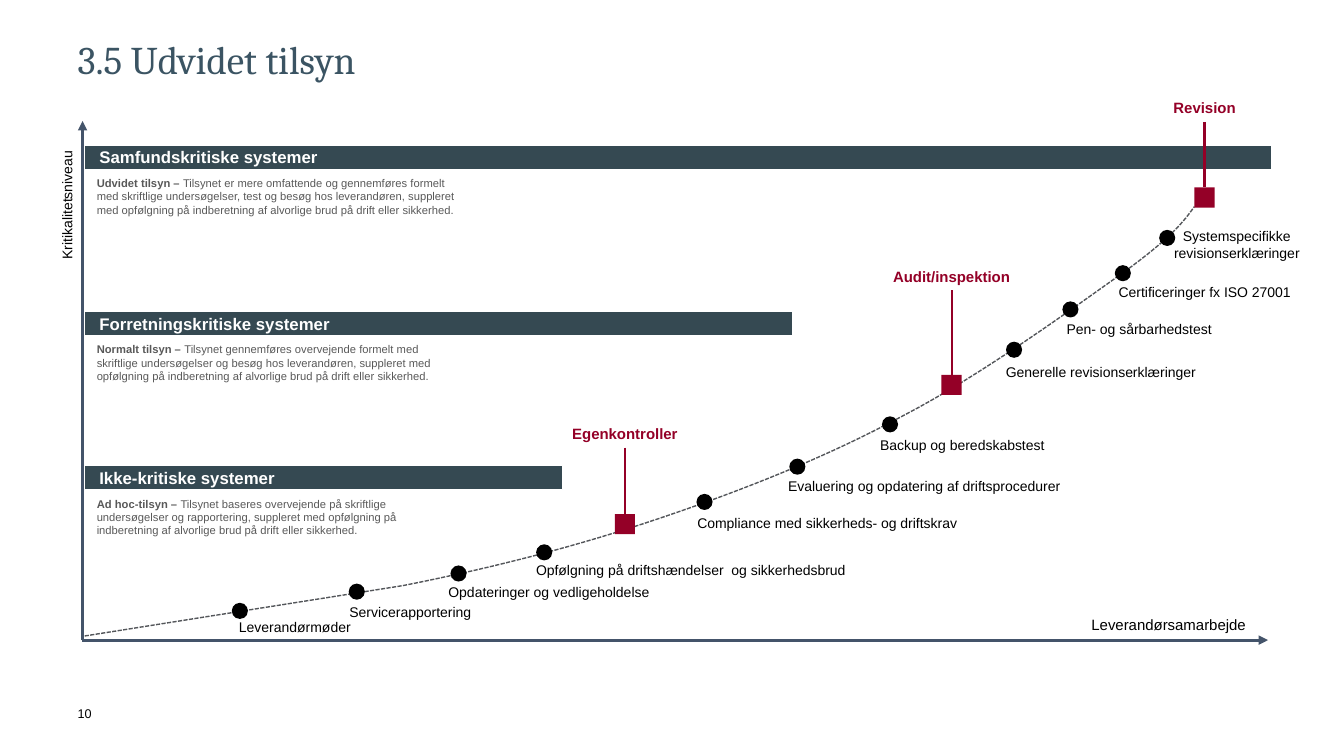
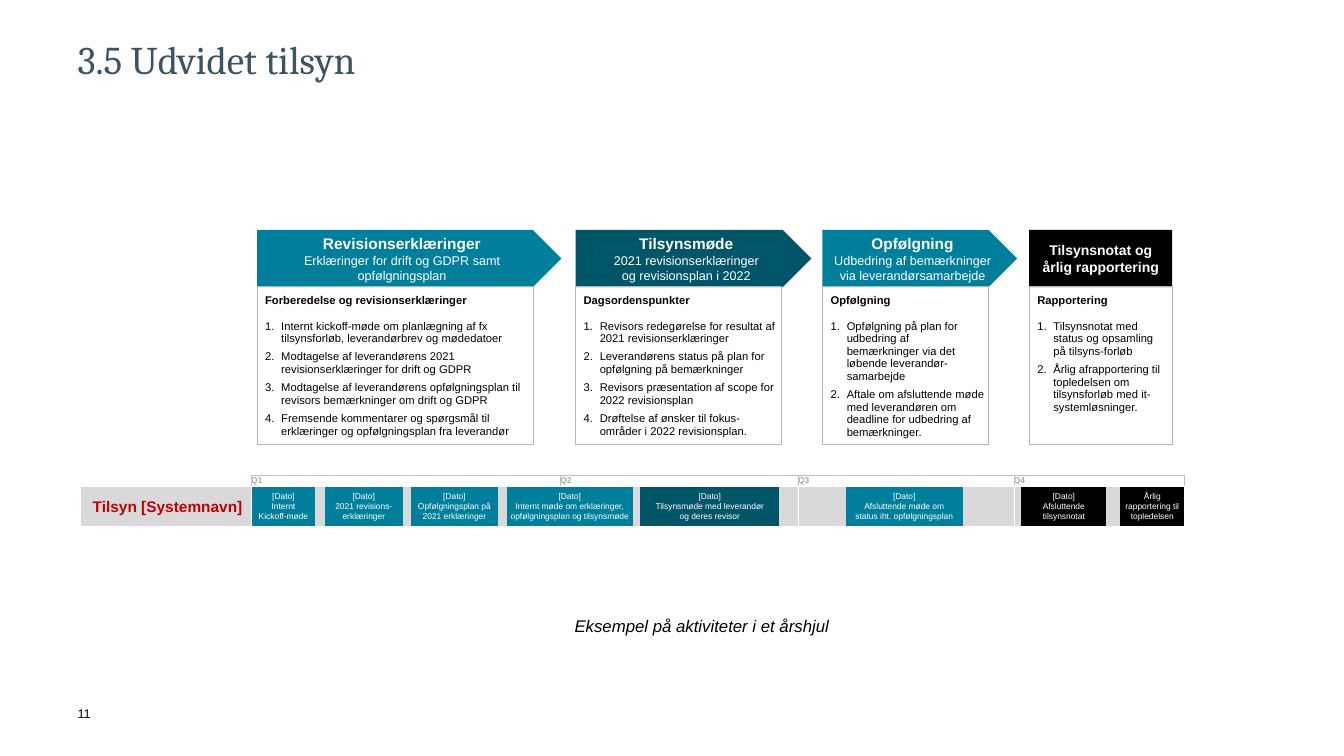
from lxml.etree import SubElement
from pptx import Presentation
from pptx.dml.color import RGBColor
from pptx.enum.dml import MSO_LINE
from pptx.enum.shapes import MSO_CONNECTOR, MSO_SHAPE as SHAPE
from pptx.enum.text import MSO_ANCHOR as ANCHOR, PP_ALIGN as ALIGN
from pptx.oxml.ns import qn
from pptx.util import Pt

# Shared look
TITLE_COLOR = RGBColor(0x3B, 0x54, 0x63)
BLACK = RGBColor(0, 0, 0)
WHITE = RGBColor(0xFF, 0xFF, 0xFF)
BAND = RGBColor(0x35, 0x49, 0x52)
AXIS = RGBColor(0x44, 0x54, 0x6A)
CURVE = RGBColor(0x53, 0x56, 0x5A)
CRIMSON = RGBColor(0x94, 0x00, 0x27)
BODY_GREY = RGBColor(0x59, 0x59, 0x59)
TEAL = RGBColor(0x00, 0x7F, 0x9D)
DARK_TEAL = RGBColor(0x00, 0x55, 0x69)
FRAME = RGBColor(0xBA, 0xB6, 0xB0)
GREY = RGBColor(0xD9, 0xD9, 0xD9)
RULE = RGBColor(0xBF, 0xBF, 0xBF)
QUARTER_TEXT = RGBColor(0xA6, 0xA6, 0xA6)
RED = RGBColor(0xC0, 0x00, 0x00)
SANS, SERIF = "Arial", "Cambria"
NO_INSET = (0, 0, 0, 0)
INSET = (7.2, 3.6, 7.2, 3.6)
NO_STYLE = "{2D5ABB26-0587-4C30-8999-92F81FD0307C}"
TITLE = "3.5 Udvidet tilsyn"

# Slide 10: top, band width, heading, text width, lead-in, description
LEVELS = [
    (103.7, 847.4, "Samfundskritiske systemer", 260.6, "Udvidet tilsyn – ",
     "Tilsynet er mere omfattende og gennemføres formelt med skriftlige undersøgelser, "
     "test og besøg hos leverandøren, suppleret med opfølgning på indberetning af "
     "alvorlige brud på drift eller sikkerhed."),
    (222.5, 505.4, "Forretningskritiske systemer", 243.4, "Normalt tilsyn – ",
     "Tilsynet gennemføres overvejende formelt med skriftlige undersøgelser og besøg hos "
     "leverandøren, suppleret med opfølgning på indberetning af alvorlige brud på drift "
     "eller sikkerhed."),
    (332.6, 341.3, "Ikke-kritiske systemer", 223.9, "Ad hoc-tilsyn – ",
     "Tilsynet baseres overvejende på skriftlige undersøgelser og rapportering, suppleret "
     "med opfølgning på indberetning af alvorlige brud på drift eller sikkerhed."),
]
# Dot left and top, label left, top and width, alignment, label
STEPS = [
    (165.6, 430.6, 154.1, 438.5, 113, ALIGN.CENTER, "Leverandørmøder"),
    (249.1, 416.9, 237.6, 427.7, 110.9, ALIGN.CENTER, "Servicerapportering"),
    (321.8, 403.9, 313.2, 413.3, 164.2, ALIGN.LEFT, "Opdateringer og vedligeholdelse"),
    (383, 388.8, 375.8, 397.4, 238.3, ALIGN.LEFT,
     "Opfølgning på driftshændelser  og sikkerhedsbrud"),
    (497.5, 352.8, 491, 364.3, 204.5, ALIGN.LEFT, "Compliance med sikkerheds- og driftskrav"),
    (563.8, 327.6, 555.8, 337.7, 214.6, ALIGN.LEFT,
     "Evaluering og opdatering af driftsprocedurer"),
    (630, 297.4, 610.6, 308.2, 153.4, ALIGN.CENTER, "Backup og beredskabstest"),
    (718.6, 244.1, 711.4, 256.3, 158.4, ALIGN.LEFT, "Generelle revisionserklæringer"),
    (758.9, 215.3, 747.4, 225.4, 132.5, ALIGN.CENTER, "Pen- og sårbarhedstest"),
    (796.3, 189.4, 790.6, 198.7, 139.7, ALIGN.CENTER, "Certificeringer fx ISO 27001"),
    (828, 164.2, 830.9, 159.1, 105.1, ALIGN.CENTER, "Systemspecifikke revisionserklæringer"),
]
# Centre, top of the stem, top of the square, label
MILESTONES = [
    (446.4, 319.7, 367.2, "Egenkontroller"),
    (679.7, 207.4, 267.8, "Audit/inspektion"),
    (860.4, 87.1, 133.9, "Revision"),
]
CURVE_START = (60.5, 454.3)
# Each Bézier piece: two control points and its end
CURVE_PIECES = [
    ((136.3, 442.3), (212.2, 430.3), (288, 418.3)),
    ((356.4, 404.6), (411.8, 390.2), (471.6, 370.1)),
    ((531.4, 349.9), (591.1, 326.2), (645.8, 296.6)),
    ((701.3, 267.8), (768.2, 218.9), (802.8, 194.4)),
    ((837.4, 169.2), (845.3, 158.4), (853.2, 147.6)),
]

# Slide 11: left, arrow width, box width, colour, heading, subheading, box title, items
PHASES = [
    (183.6, 217.4, 197.3, TEAL, "Revisionserklæringer",
     "Erklæringer for drift og GDPR samt opfølgningsplan",
     "Forberedelse og revisionserklæringer",
     ["Internt kickoff-møde om planlægning af fx tilsynsforløb, leverandørbrev og mødedatoer",
      "Modtagelse af leverandørens 2021 revisionserklæringer for drift og GDPR",
      "Modtagelse af leverandørens opfølgningsplan til revisors bemærkninger om drift og GDPR",
      "Fremsende kommentarer og spørgsmål til erklæringer og opfølgningsplan fra leverandør"]),
    (411.1, 168.5, 146.9, DARK_TEAL, "Tilsynsmøde",
     "2021 revisionserklæringer\nog revisionsplan i 2022", "Dagsordenspunkter",
     ["Revisors redegørelse for resultat af 2021 revisionserklæringer",
      "Leverandørens status på plan for opfølgning på bemærkninger",
      "Revisors præsentation af scope for 2022 revisionsplan",
      "Drøftelse af ønsker til fokus-områder i 2022 revisionsplan."]),
    (587.5, 139, 118.8, TEAL, "Opfølgning",
     "Udbedring af bemærkninger via leverandørsamarbejde", "Opfølgning",
     ["Opfølgning på plan for udbedring af bemærkninger via det løbende leverandør-samarbejde",
      "Aftale om afsluttende møde med leverandøren om deadline for udbedring af bemærkninger."]),
    (735.1, 102.2, 102.2, BLACK, "Tilsynsnotat og\nårlig rapportering", "", "Rapportering",
     ["Tilsynsnotat med status og opsamling på tilsyns-forløb",
      "Årlig afrapportering til topledelsen om tilsynsforløb med it-systemløsninger."]),
]
YEAR_COLUMNS = [121.7, 221, 169.9, 154.1, 121.7]
QUARTERS = ["", "Q1", "Q2", "Q3", "Q4"]
SYSTEM = "Tilsyn [Systemnavn]"
# Width, colour, text; a gap has no text
ACTIVITIES = [
    (44.9, TEAL, "[Dato]\nInternt\nKickoff-møde"), (7.2, None, ""),
    (55.6, TEAL, "[Dato]\n2021 revisions-erklæringer"), (5.8, GREY, ""),
    (62.3, TEAL, "[Dato]\nOpfølgningsplan på 2021 erklæringer"), (6.1, None, ""),
    (90.3, TEAL, "[Dato]\nInternt møde om erklæringer, opfølgningsplan og tilsynsmøde"),
    (5.4, None, ""),
    (99, DARK_TEAL, "[Dato]\nTilsynsmøde med leverandør\nog deres revisor"), (47.7, None, ""),
    (83.5, TEAL, "[Dato]\nAfsluttende møde om\nstatus iht. opfølgningsplan"),
    (42, None, ""),
    (60.6, BLACK, "[Dato]\nAfsluttende\ntilsynsnotat"), (10.1, None, ""),
    (45.6, BLACK, "Årlig rapportering til topledelsen"),
]


def style(paragraph, size, color, bold=False, italic=False, align=ALIGN.LEFT, face=SANS):
    font = paragraph.font
    font.name, font.size, font.bold, font.italic = face, Pt(size), bold, italic
    font.color.rgb = color
    paragraph.alignment = align


def lay_out(frame, inset, anchor):
    frame.word_wrap = True
    frame.margin_left, frame.margin_top, frame.margin_right, frame.margin_bottom = map(Pt, inset)
    frame.vertical_anchor = anchor


def add_text(slide, box, text, size, color=BLACK, inset=INSET, anchor=ANCHOR.TOP, **look):
    label = slide.shapes.add_textbox(*map(Pt, box))
    lay_out(label.text_frame, inset, anchor)
    paragraph = label.text_frame.paragraphs[0]
    paragraph.text = text
    style(paragraph, size, color, **look)
    return label


def add_block(slide, kind, box, fill=None, line=None):
    block = slide.shapes.add_shape(kind, *map(Pt, box))
    block.shadow.inherit = False
    if fill is None:
        block.fill.background()
    else:
        block.fill.solid()
        block.fill.fore_color.rgb = fill
    if line is None:
        block.line.fill.background()
    else:
        block.line.color.rgb, block.line.width = line, Pt(0.5)
    return block


def add_line(slide, start, end, color, width, arrow=False):
    line = slide.shapes.add_connector(MSO_CONNECTOR.STRAIGHT, *map(Pt, start + end))
    line.line.color.rgb, line.line.width = color, Pt(width)
    properties = line._element.spPr
    if arrow:
        SubElement(properties.find(qn("a:ln")), qn("a:tailEnd"), type="triangle")
    SubElement(properties, qn("a:effectLst"))
    return line


def add_table(slide, left, top, widths, heights):
    frame = slide.shapes.add_table(len(heights), len(widths), Pt(left), Pt(top),
                                   Pt(sum(widths)), Pt(sum(heights)))
    table = frame.table
    table.first_row = table.horz_banding = False
    table._tbl.tblPr.find(qn("a:tableStyleId")).text = NO_STYLE
    for column, width in zip(table.columns, widths):
        column.width = Pt(width)
    for row, height in zip(table.rows, heights):
        row.height = Pt(height)
    return table


def fill_cell(cell, text, size, color, fill=None, indent=0, borders=(), spacing=1.08, **look):
    cell.margin_left = Pt(indent)
    cell.margin_top = cell.margin_right = cell.margin_bottom = 0
    cell.vertical_anchor = ANCHOR.MIDDLE
    for side, (border, width) in zip("LRTB", borders):
        edge = SubElement(cell._tc.get_or_add_tcPr(), qn("a:ln" + side), w=str(Pt(width)))
        SubElement(SubElement(edge, qn("a:solidFill")), qn("a:srgbClr"), val=str(border))
    if fill is None:
        cell.fill.background()
    else:
        cell.fill.solid()
        cell.fill.fore_color.rgb = fill
    paragraph = cell.text_frame.paragraphs[0]
    paragraph.text = text.replace("\n", "\v")
    paragraph.line_spacing = spacing
    style(paragraph, size, color, **look)


def add_slide(deck, number):
    slide = deck.slides.add_slide(deck.slide_layouts[6])
    add_text(slide, (55.4, 504, 22.3, 21.6), str(number), 9, inset=NO_INSET)
    title = add_text(slide, (55.4, 28.8, 849.6, 73.4), TITLE, 28, TITLE_COLOR,
                     inset=(0, 0, 81.4, 0), face=SERIF)
    title.text_frame.paragraphs[0].line_spacing = 0.9
    return slide


def add_curve(slide, steps=16):
    start, points = CURVE_START, []
    for first, second, end in CURVE_PIECES:
        for step in range(1, steps + 1):
            t = step / steps
            u = 1 - t
            points.append(tuple(
                Pt(u**3 * a + 3 * u * u * t * b + 3 * u * t * t * c + t**3 * d)
                for a, b, c, d in zip(start, first, second, end)))
        start = end
    builder = slide.shapes.build_freeform(*map(Pt, CURVE_START))
    builder.add_line_segments(points, close=False)
    curve = builder.convert_to_shape()
    curve.shadow.inherit = False
    curve.fill.background()
    curve.line.color.rgb, curve.line.width = CURVE, Pt(1)
    curve.line.dash_style = MSO_LINE.SQUARE_DOT


def build_criticality(slide):
    # Levels
    for top, width, heading, text_width, lead, description in LEVELS:
        band = add_block(slide, SHAPE.RECTANGLE, (60.5, top, width, 17.3), BAND, WHITE)
        lay_out(band.text_frame, (10.5, 3.6, 7.2, 3.6), ANCHOR.MIDDLE)
        band.text_frame.text = heading
        style(band.text_frame.paragraphs[0], 12, WHITE, bold=True)
        note = add_text(slide, (69.1, top + 22.3, text_width, 28.8), lead, 8, BODY_GREY,
                        inset=NO_INSET)
        paragraph = note.text_frame.paragraphs[0]
        paragraph.runs[0].font.bold = True
        paragraph.add_run().text = description

    # Curve and axes
    add_curve(slide)
    add_line(slide, (59, 457.2), (59, 86.4), AXIS, 2.25, arrow=True)
    add_line(slide, (58.3, 457.2), (905.8, 457.2), AXIS, 2.25, arrow=True)
    criticality = add_text(slide, (-54.7, 193.7, 205.2, 19.4), "Kritikalitetsniveau", 10,
                           align=ALIGN.RIGHT)
    criticality.rotation = 270
    add_text(slide, (726.5, 436.3, 170.6, 20.2), "Leverandørsamarbejde", 10.7, align=ALIGN.RIGHT)

    # Steps along the curve
    for dot_left, dot_top, left, top, width, align, text in STEPS:
        add_block(slide, SHAPE.OVAL, (dot_left, dot_top, 11.5, 11.5), BLACK)
        add_text(slide, (left, top, width, 19.4), text, 10, align=align)

    # Milestones
    for center, stem_top, top, text in MILESTONES:
        square = add_block(slide, SHAPE.RECTANGLE, (center - 7.2, top, 14.4, 14.4), CRIMSON)
        stem = add_line(slide, (center, stem_top), (center, top), CRIMSON, 1.5)
        stem.end_connect(square, 0)
        add_text(slide, (center - 48, stem_top - 20, 96, 20), text, 10.7, CRIMSON,
                 inset=NO_INSET, anchor=ANCHOR.MIDDLE, bold=True, align=ALIGN.CENTER)


def build_year(slide):
    # Year with quarters
    year = add_table(slide, 57.6, 339.1, YEAR_COLUMNS, [8.6, 28.1])
    thin, white = (RULE, 0.25), (WHITE, 0.5)
    for column, quarter in enumerate(QUARTERS):
        edge = thin if quarter else white
        fill_cell(year.cell(0, column), quarter, 6, QUARTER_TEXT, bold=True,
                  borders=(edge, thin, edge, white))
        text, size, indent = ("", 6, 0) if column else (SYSTEM, 11, 8.6)
        fill_cell(year.cell(1, column), text, size, RED, GREY, indent, (white,) * 4, bold=True)

    # Activities
    plan = add_table(slide, 180, 347.8, [activity[0] for activity in ACTIVITIES], [28.1])
    for column, (_, color, text) in enumerate(ACTIVITIES):
        fill_cell(plan.cell(0, column), text, 6, WHITE, color, spacing=Pt(7), align=ALIGN.CENTER)

    # Phases
    for left, arrow_width, box_width, color, heading, detail, box_title, items in PHASES:
        kind = SHAPE.PENTAGON if detail else SHAPE.RECTANGLE
        arrow = add_block(slide, kind, (left, 164.2, arrow_width, 41), color)
        lay_out(arrow.text_frame, INSET, ANCHOR.MIDDLE)
        paragraph = arrow.text_frame.paragraphs[0]
        paragraph.text = "\v".join(filter(None, [heading, detail])).replace("\n", "\v")
        style(paragraph, 9 if detail else 10, WHITE, bold=not detail, align=ALIGN.CENTER)
        if detail:
            paragraph.runs[0].font.size, paragraph.runs[0].font.bold = Pt(11), True

        box = add_block(slide, SHAPE.RECTANGLE, (left, 204.5, box_width, 113), line=FRAME)
        lay_out(box.text_frame, (5.8, 5.8, 2.9, 5.8), ANCHOR.TOP)
        box.text_frame.text = "\n".join([box_title] + items)
        for index, paragraph in enumerate(box.text_frame.paragraphs):
            if index:
                properties = paragraph._p.get_or_add_pPr()
                properties.set("marL", str(Pt(11.5)))
                properties.set("indent", str(Pt(-11.5)))
                SubElement(properties, qn("a:buAutoNum"), type="arabicPeriod")
            style(paragraph, 8, BLACK, bold=not index)
            paragraph.line_spacing = Pt(9)
            paragraph.space_after = Pt(4 if index else 9)

    add_text(slide, (410.4, 439.9, 277.2, 25.2), "Eksempel på aktiviteter i et årshjul", 12,
             inset=(0, 0, 81.4, 0), italic=True)


def main():
    deck = Presentation()
    deck.slide_width, deck.slide_height = Pt(960), Pt(540)
    for number, build in enumerate([build_criticality, build_year], start=10):
        build(add_slide(deck, number))
    deck.save("out.pptx")


if __name__ == "__main__":
    main()
